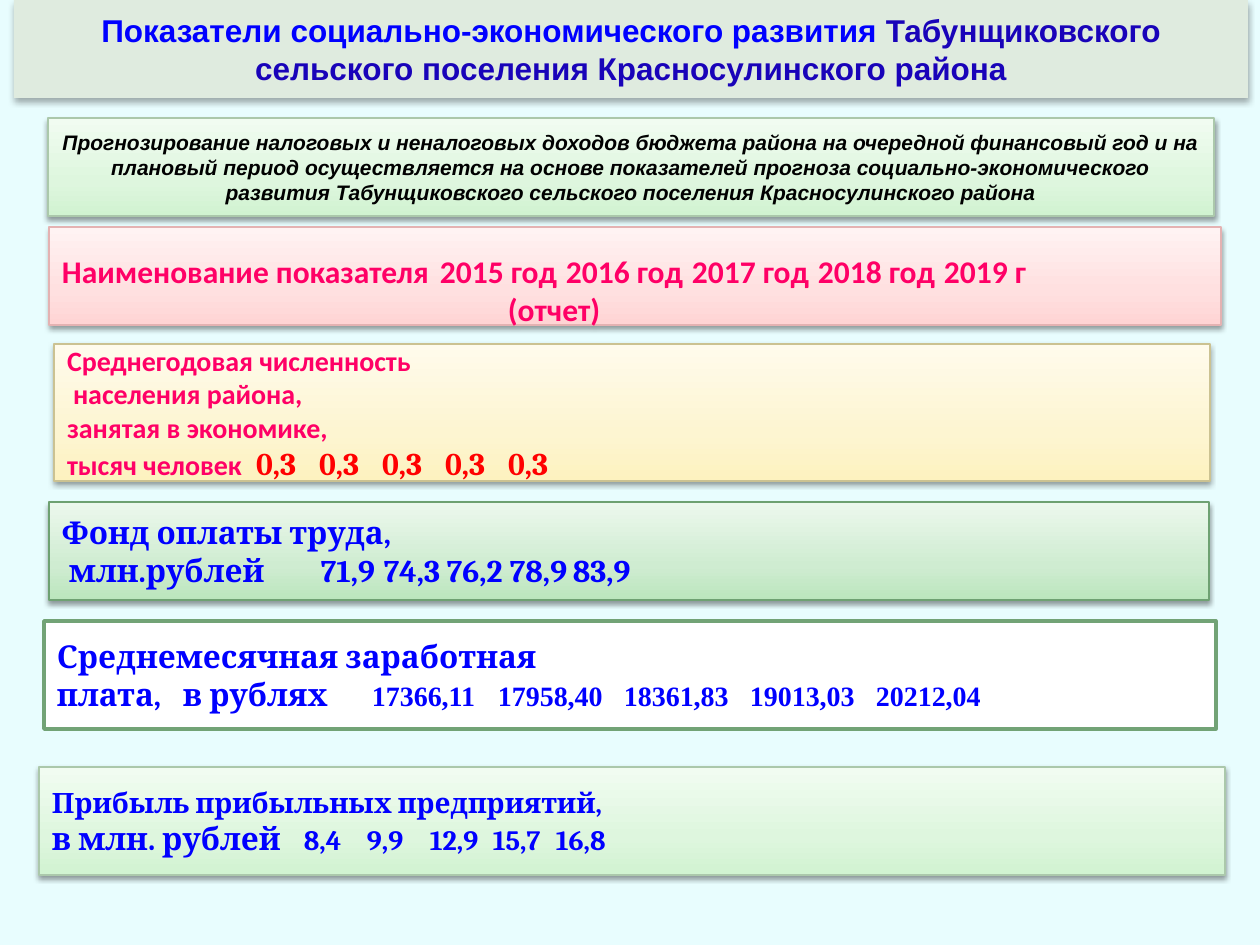
"""Build the slide of social and economic indicators of the settlement."""
from copy import deepcopy

from lxml import etree
from pptx import Presentation
from pptx.dml.color import RGBColor
from pptx.enum.shapes import MSO_SHAPE
from pptx.enum.text import MSO_ANCHOR, MSO_AUTO_SIZE, PP_ALIGN
from pptx.oxml.ns import qn
from pptx.util import Emu, Pt

RECTANGLE = MSO_SHAPE.RECTANGLE
MIDDLE = MSO_ANCHOR.MIDDLE
CENTER, LEFT = PP_ALIGN.CENTER, PP_ALIGN.LEFT
FIXED = MSO_AUTO_SIZE.NONE
PX = 914400 / 126
INSET = 13
TITLE_ONLY = 5

THEME = {
    "background": "E8FDFE",
    "title fill": "DFEBDF",
    "blue": "0000FF",
    "navy": "1903B9",
    "mint": (["D1F3D1", "DEF6DE", "F1FCF1"], "ABC8AB", 0.75),
    "rose": (["FFD4D4", "FFE0E0", "FFF3F3"], "E4B2B2", 0.75),
    "sand": (["FDF2BF", "FDF5D1", "FFFBEC"], "CBC292", 0.75),
    "green": (["BBE6BD", "CFECD1", "ECF8ED"], "6EA172", 0.75),
    "white": (["FFFFFF"], "72A376", 2),
    "title": ("Arial", 18, "0000FF"),
    "intro": ("Arial", 12, "000000"),
    "header": ("Calibri", 18, "FF0066"),
    "population": ("Calibri", 16, "FF0066"),
    "population values": ("Cambria", 18, "FF0000"),
    "large": ("Cambria", 18, "0000FF"),
    "small": ("Cambria", 16, "0000FF"),
    "salary values": ("Times New Roman", 16, "0000FF"),
}

# Each line: indent, label, label style, values, value style.
BANDS = [
    {"box": (48, 118, 1166, 98), "look": "mint", "align": CENTER, "stops": [], "lines": [
        (0, "Прогнозирование налоговых и неналоговых доходов бюджета района на очередной "
            "финансовый год и на плановый период осуществляется на основе показателей "
            "прогноза социально-экономического развития Табунщиковского сельского "
            "поселения Красносулинского района", "intro", [], None)]},
    {"box": (49, 227, 1172, 98), "look": "rose", "insets": (28, 0),
     "stops": [478, 624, 762, 900, 1046], "lines": [
         (0, "Наименование показателя", "header",
          ["2015 год", "2016 год", "2017 год", "2018 год", "2019 г"], "header"),
         (446, "(отчет)", "header", [], None)]},
    {"box": (54, 344, 1156, 137), "look": "sand", "insets": (0, 0),
     "stops": [532, 697, 841, 971, 1073], "lines": [
         (0, "Среднегодовая численность", "population", [], None),
         (6, "населения района,", "population", [], None),
         (0, "занятая в экономике,", "population", [], None),
         (0, "тысяч человек", "population", ["0,3"] * 5, "population values")]},
    {"box": (49, 502, 1160, 98), "look": "green",
     "stops": [561, 712, 858, 983, 1103], "lines": [
         (0, "Фонд оплаты труда,", "large", [], None),
         (7, "млн.рублей", "large", ["71,9", "74,3", "76,2", "78,9", "83,9"], "large")]},
    {"box": (44, 621, 1172, 108), "look": "white",
     "stops": [182, 556, 694, 834, 966, 1085], "lines": [
         (0, "Среднемесячная заработная", "large", [], None),
         (0, "плата,\tв рублях", "large",
          ["17366,11", "17958,40", "18361,83", "19013,03", "20212,04"], "salary values")]},
    {"box": (39, 767, 1186, 108), "look": "mint",
     "stops": [592, 716, 825, 972, 1069], "lines": [
         (0, "Прибыль прибыльных предприятий,", "small", [], None),
         (0, "в млн. рублей", "large", ["8,4", "9,9", "12,9", "15,7", "16,8"], "small")]},
]


def set_font(font, style):
    name, size, color = THEME[style]
    font.name, font.size, font.bold = name, Pt(size), True
    font.color.rgb = RGBColor.from_string(color)


def add_shadow(shape, blur, distance, opacity):
    shape.shadow.inherit = False
    effects = shape._element.spPr.find(qn("a:effectLst"))
    shadow = etree.SubElement(effects, qn("a:outerShdw"), blurRad=str(Pt(blur)),
                              dist=str(Pt(distance)), dir="5400000", rotWithShape="0")
    color = etree.SubElement(shadow, qn("a:srgbClr"), val="000000")
    etree.SubElement(color, qn("a:alpha"), val=str(opacity * 1000))


deck = Presentation()
deck.slide_width, deck.slide_height = Emu(round(1260 * PX)), Emu(round(945 * PX))
page = deck.slides.add_slide(deck.slide_layouts[TITLE_ONLY])
page.background.fill.solid()
page.background.fill.fore_color.rgb = RGBColor.from_string(THEME["background"])

title = page.shapes.title
title.left, title.top, title.width, title.height = [
    Emu(round(side * PX)) for side in (14, 0, 1234, 98)]
title.fill.solid()
title.fill.fore_color.rgb = RGBColor.from_string(THEME["title fill"])
add_shadow(title, 3.5, 2.2, 32)
title.text_frame.auto_size = FIXED
title.text_frame.vertical_anchor = MIDDLE
para = title.text_frame.paragraphs[0]
para.alignment = CENTER
set_font(para.font, "title")
for text, color in [
        ("Показатели социально-экономического развития ", "blue"),
        ("Табунщиковского сельского поселения Красносулинского района", "navy")]:
    span = para.add_run()
    span.text = text
    span.font.color.rgb = RGBColor.from_string(THEME[color])

for band in BANDS:
    box = page.shapes.add_shape(RECTANGLE, *[Emu(round(side * PX)) for side in band["box"]])
    colors, edge, weight = THEME[band["look"]]
    box.line.color.rgb = RGBColor.from_string(edge)
    box.line.width = Pt(weight)
    if len(colors) == 1:
        box.shadow.inherit = False
        box.fill.solid()
        box.fill.fore_color.rgb = RGBColor.from_string(colors[0])
    else:
        add_shadow(box, 3.1, 1.6, 38)
        box.fill.gradient()
        box.fill.gradient_angle = 90
        first = box._element.spPr.find(qn("a:gradFill")).find(qn("a:gsLst"))[0]
        first.addnext(deepcopy(first))
        for stop, color, position in zip(box.fill.gradient_stops, colors, (0, 0.35, 1)):
            stop.color.rgb = RGBColor.from_string(color)
            stop.position = position

    frame = box.text_frame
    frame.word_wrap = True
    frame.vertical_anchor = MIDDLE
    top, bottom = band.get("insets", (6, 6))
    frame.margin_top, frame.margin_bottom = Emu(round(top * PX)), Emu(round(bottom * PX))
    frame.margin_left = frame.margin_right = Emu(round(INSET * PX))
    for index, (indent, label, style, values, value_style) in enumerate(band["lines"]):
        para = frame.add_paragraph() if index else frame.paragraphs[0]
        para.alignment = band.get("align", LEFT)
        properties = para._p.get_or_add_pPr()
        properties.set("marL", str(round(indent * PX)))
        properties.set("indent", "0")
        if values:
            tabs = etree.SubElement(properties, qn("a:tabLst"))
            for stop in band["stops"]:
                offset = round((stop - band["box"][0] - INSET) * PX)
                etree.SubElement(tabs, qn("a:tab"), pos=str(offset), algn="l")
        set_font(para.font, style)
        para.font.italic = style == "intro"
        para.add_run().text = label
        if values:
            span = para.add_run()
            span.text = "".join("\t" + value for value in values)
            if value_style != style:
                set_font(span.font, value_style)

deck.save("out.pptx")
